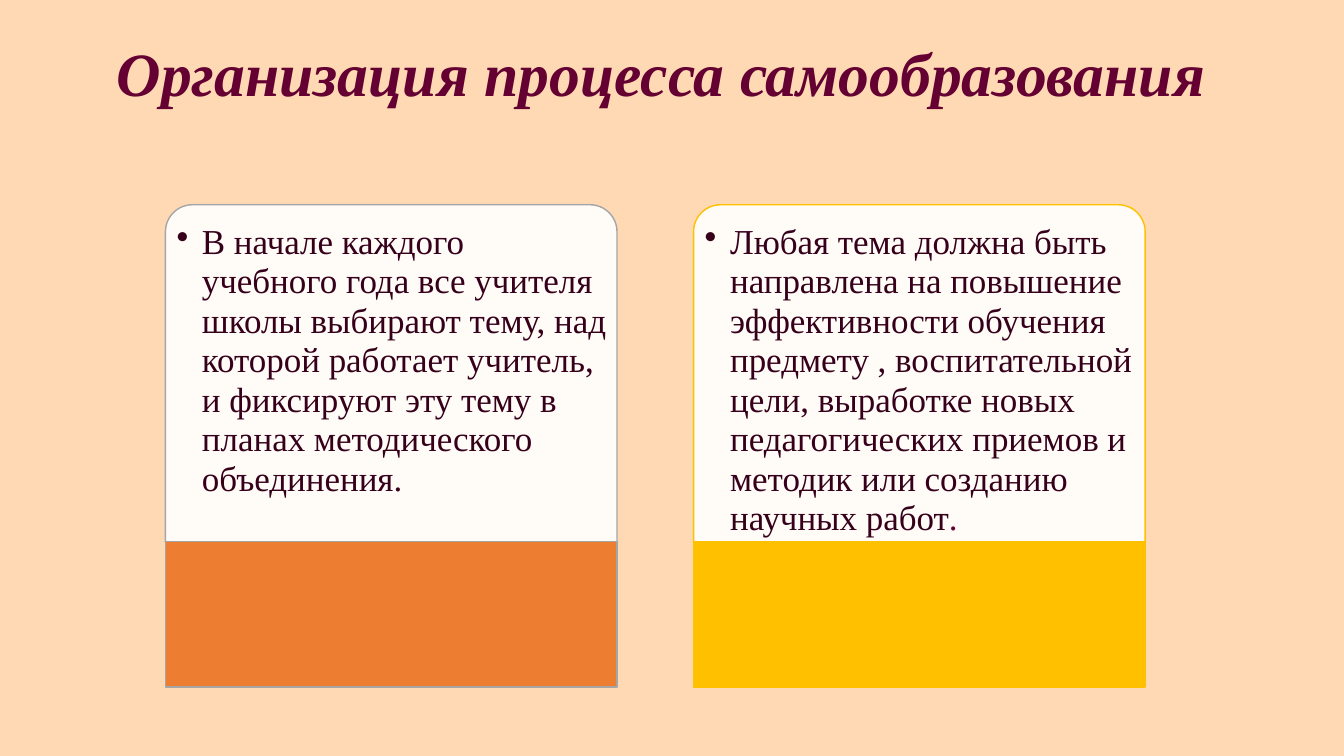
from lxml.etree import SubElement
from pptx import Presentation
from pptx.dml.color import RGBColor
from pptx.enum.shapes import MSO_SHAPE
from pptx.enum.text import MSO_ANCHOR, PP_ALIGN
from pptx.oxml.ns import qn
from pptx.util import Cm, Pt

FONT = "Times New Roman"
HUES = {
    "back": "FFD9B3",
    "title": "640032",
    "text": "36001B",
    "white": "FFFFFF",
    "gray": "A5A5A5",
    "orange": "ED7D31",
    "gold": "FFC000",
}
WIDE = 11.38
LEFT, STEP = 4.17, 13.31
TOP, TALL = 5.16, 8.5
BASE, FOOT = 13.65, 3.66

CARDS = [
    ("orange", "gray", [
        ("В начале каждого учебного года все учителя школы выбирают тему, "
         "над которой работает учитель, и фиксируют эту тему в планах "
         "методического объединения.", "text"),
    ]),
    ("gold", "gold", [
        ("Любая тема должна быть направлена на повышение эффективности "
         "обучения предмету , воспитательной цели, выработке новых "
         "педагогических приемов и методик или созданию научных работ", "text"),
        (".", "title"),
    ]),
]


def hue(name):
    return RGBColor.from_string(HUES[name])


def add_run(para, text, size, color, strong=False):
    run = para.add_run()
    run.text = text
    font = run.font
    font.name, font.size = FONT, Pt(size)
    font.bold = font.italic = strong
    font.color.rgb = hue(color)


def add_box(slide, left, top, width, height, pads):
    box = slide.shapes.add_textbox(Cm(left), Cm(top), Cm(width), Cm(height))
    frame = box.text_frame
    frame.word_wrap = True
    frame.margin_left, frame.margin_top, frame.margin_right, frame.margin_bottom = map(Cm, pads)
    return frame


def add_block(slide, kind, left, top, height, fill, line):
    block = slide.shapes.add_shape(kind, Cm(left), Cm(top), Cm(WIDE), Cm(height))
    block.shadow.inherit = False
    block.fill.solid()
    block.fill.fore_color.rgb = hue(fill)
    block.line.color.rgb = hue(line)
    block.line.width = Pt(1)
    return block


def add_title(slide, text):
    frame = add_box(slide, 2.69, 0.76, 28.85, 2.36, (0.25, 0.13, 0.25, 0.13))
    frame.vertical_anchor = MSO_ANCHOR.MIDDLE
    para = frame.paragraphs[0]
    para.line_spacing = 0.9
    add_run(para, text, 44, "title", True)


def add_bullet(para):
    props = para._p.get_or_add_pPr()
    props.set("marL", str(Cm(0.64)))
    props.set("indent", str(Cm(-0.64)))
    SubElement(props, qn("a:buChar")).set("char", "•")


def add_card(slide, left, fill, line, parts):
    # White panel with rounded top corners
    panel = add_block(slide, MSO_SHAPE.ROUND_2_SAME_RECTANGLE, left, TOP, TALL, "white", line)
    panel.adjustments[0], panel.adjustments[1] = 0.08, 0
    tint = panel.fill._xPr.find(qn("a:solidFill"))[0]
    SubElement(tint, qn("a:alpha")).set("val", "90000")

    # Bulleted text
    frame = add_box(slide, left + 0.2, TOP + 0.2, 10.98, 8.3, (0.08, 0.25, 0.07, 0.08))
    para = frame.paragraphs[0]
    add_bullet(para)
    para.alignment = PP_ALIGN.LEFT
    para.line_spacing = 0.94
    for text, color in parts:
        add_run(para, text, 25, color)

    # Coloured base
    add_block(slide, MSO_SHAPE.RECTANGLE, left, BASE, FOOT, fill, line)


def main():
    deck = Presentation()
    deck.slide_width, deck.slide_height = Cm(33.87), Cm(19.05)
    slide = deck.slides.add_slide(deck.slide_layouts[6])
    slide.background.fill.solid()
    slide.background.fill.fore_color.rgb = hue("back")

    add_title(slide, "Организация процесса самообразования")
    for spot, (fill, line, parts) in enumerate(CARDS):
        add_card(slide, LEFT + spot * STEP, fill, line, parts)
    deck.save("out.pptx")


if __name__ == "__main__":
    main()
